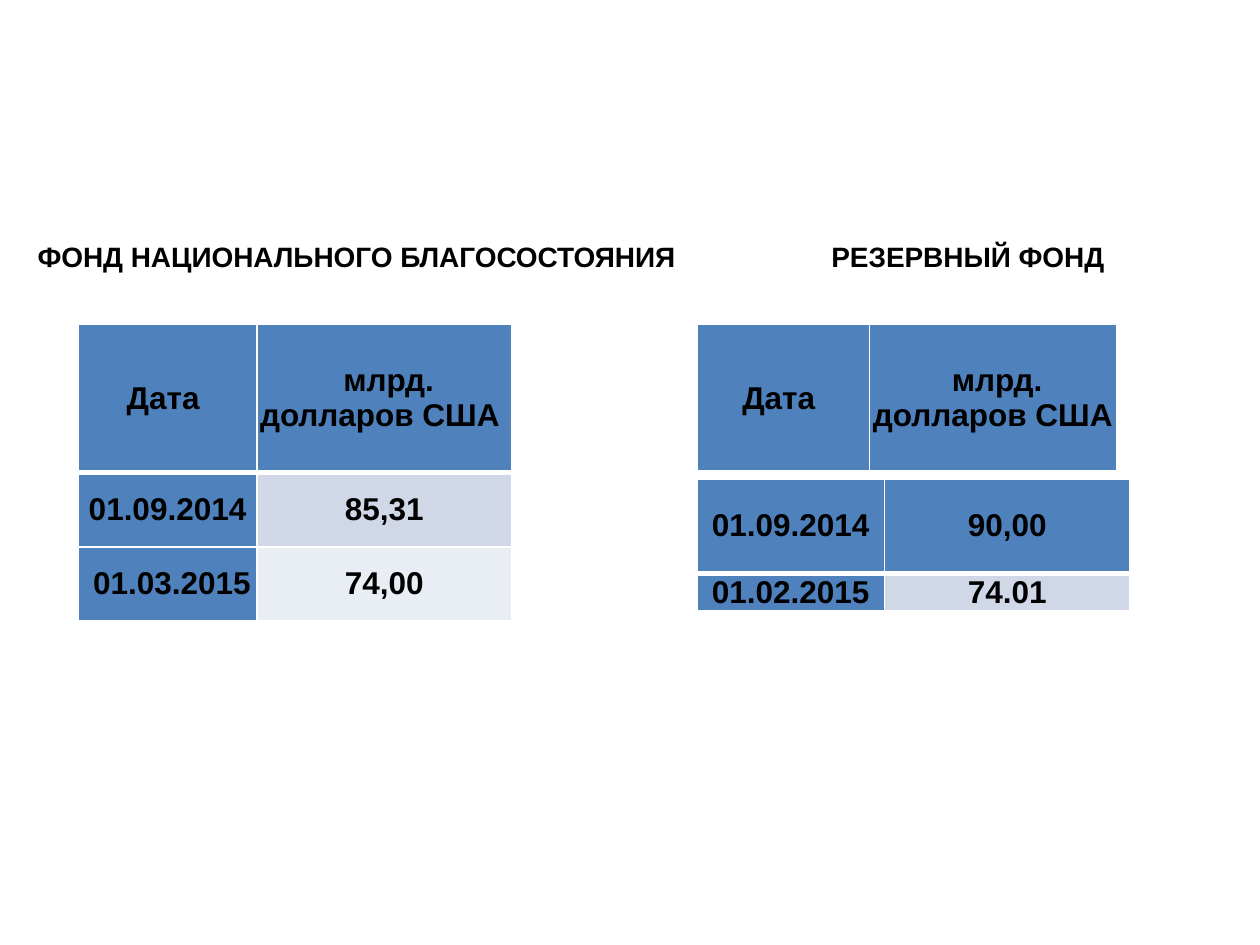
import pptx
import pptx.util
import pptx.dml.color
import pptx.enum.text
import pptx.oxml
import pptx.oxml.ns

Inches, Pt = pptx.util.Inches, pptx.util.Pt
RGBColor = pptx.dml.color.RGBColor
MIDDLE = pptx.enum.text.MSO_ANCHOR.MIDDLE
CENTER = pptx.enum.text.PP_ALIGN.CENTER

BLACK = RGBColor(0x00, 0x00, 0x00)
WHITE = RGBColor(0xFF, 0xFF, 0xFF)
BLUE = RGBColor(0x4F, 0x81, 0xBD)
BANDS = [RGBColor(0xD0, 0xD8, 0xE8), RGBColor(0xE9, 0xED, 0xF4)]

# Content: headings as (text, left, width), tables with their geometry
HEADINGS = [
    ("ФОНД НАЦИОНАЛЬНОГО БЛАГОСОСТОЯНИЯ", 0.2, 5.33),
    ("РЕЗЕРВНЫЙ ФОНД", 6.5, 3.23),
]
HEADING_TOP, HEADING_HEIGHT = 1.85, 0.37
COLUMN_TITLES = ("Дата ", " млрд. долларов США ")
FUND_TABLES = [
    {"at": (0.62, 2.57), "cols": (1.42, 2.02), "heights": (1.18, 0.59, 0.59),
     "rows": [COLUMN_TITLES, ("01.09.2014", "85,31"), (" 01.03.2015", "74,00")]},
    {"at": (5.53, 3.8), "cols": (1.49, 1.95), "heights": (0.75, 0.3),
     "rows": [("01.09.2014", "90,00"), ("01.02.2015", "74.01")]},
    {"at": (5.53, 2.57), "cols": (1.37, 1.96), "heights": (1.18,),
     "rows": [COLUMN_TITLES]},
]


def write(frame, text, size):
    paragraph = frame.paragraphs[0]
    run = paragraph.add_run()
    run.text = text
    run.font.name = "Arial"
    run.font.size = Pt(size)
    run.font.bold = True
    run.font.color.rgb = BLACK
    return paragraph


def set_borders(cell, row):
    """White 1 pt edges, with a 3 pt rule under the first row."""
    widths = {"lnL": 1, "lnR": 1, "lnT": 3 if row == 1 else 1, "lnB": 3 if row == 0 else 1}
    properties = cell._tc.get_or_add_tcPr()
    for position, (edge, width) in enumerate(widths.items()):
        properties.insert(position, pptx.oxml.parse_xml(
            f'<a:{edge} {pptx.oxml.ns.nsdecls("a")} w="{Pt(width)}">'
            f'<a:solidFill><a:srgbClr val="{WHITE}"/></a:solidFill></a:{edge}>'))


def add_heading(slide, text, left, width):
    box = slide.shapes.add_textbox(Inches(left), Inches(HEADING_TOP),
                                   Inches(width), Inches(HEADING_HEIGHT))
    box.text_frame.word_wrap = True
    box.text_frame.vertical_anchor = MIDDLE
    write(box.text_frame, text, 16)


def add_fund_table(slide, fund):
    left, top = fund["at"]
    cols, heights, rows = fund["cols"], fund["heights"], fund["rows"]
    table = slide.shapes.add_table(len(rows), len(cols), Inches(left), Inches(top),
                                   Inches(sum(cols)), Inches(sum(heights))).table
    for column, width in zip(table.columns, cols):
        column.width = Inches(width)
    for r, (values, height) in enumerate(zip(rows, heights)):
        table.rows[r].height = Inches(height)
        for c, value in enumerate(values):
            cell = table.cell(r, c)
            cell.margin_left = cell.margin_right = 0
            cell.margin_top = cell.margin_bottom = 0
            cell.vertical_anchor = MIDDLE
            cell.fill.solid()
            cell.fill.fore_color.rgb = BLUE if r == 0 or c == 0 else BANDS[r - 1]
            set_borders(cell, r)
            write(cell.text_frame, value, 18).alignment = CENTER


def main():
    deck = pptx.Presentation()
    deck.slide_width, deck.slide_height = Inches(10), Inches(7.5)
    slide = deck.slides.add_slide(deck.slide_layouts[6])
    for heading in HEADINGS:
        add_heading(slide, *heading)
    for fund in FUND_TABLES:
        add_fund_table(slide, fund)
    deck.save("out.pptx")


if __name__ == "__main__":
    main()
